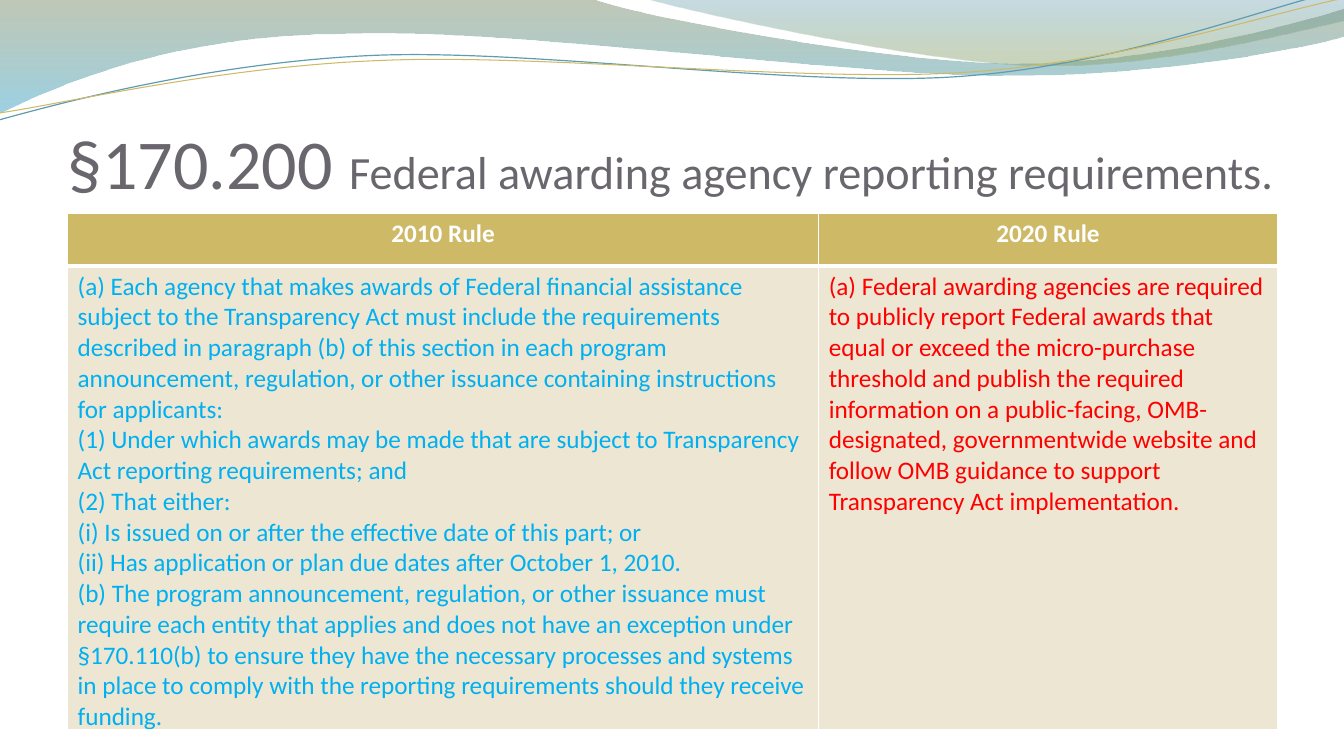
from dataclasses import dataclass

from pptx import Presentation
from pptx import util as u
from pptx.dml.color import RGBColor
from pptx.enum import text
from pptx.oxml import ns, xmlchemy

FONT = "Calibri"
WHITE = RGBColor(0xFF, 0xFF, 0xFF)
GOLD = RGBColor(0xCE, 0xB9, 0x66)
CREAM = RGBColor(0xED, 0xE6, 0xD3)
GREY = RGBColor(0x69, 0x67, 0x6D)
SKY = RGBColor(0x00, 0xB0, 0xF0)
RED = RGBColor(0xFF, 0x00, 0x00)
TEAL = RGBColor(0x5E, 0x9C, 0xB1)
OLIVE = RGBColor(0x74, 0x85, 0x5E)
BLUE = RGBColor(0x4A, 0xAC, 0xCE)
DEEP_TEAL = RGBColor(0x45, 0x88, 0x9F)
LEAF = RGBColor(0x8A, 0xA3, 0x6D)

Point = tuple[float, float]


@dataclass
class Stop:
    position: float
    color: RGBColor
    opacity: int


@dataclass
class Wave:
    start: Point
    segments: list[tuple[Point, ...]]
    stops: tuple[Stop, ...] = ()
    line: RGBColor | None = None
    width: float = 0


@dataclass
class Column:
    width: float
    heading: str
    color: RGBColor
    paragraphs: list[str]


WAVES = [
    Wave(
        (0, -0.01),
        [
            ((5.87, -0.01),),
            ((6.34, 0.17), (8.85, 0.63), (10.11, 0.63)),
            ((11.38, 0.63), (12.78, 0.26), (13.33, 0.09)),
            ((13.35, 0.36),),
            ((13.11, 0.44), (11.6, 0.76), (9.94, 0.75)),
            ((8.29, 0.75), (5.09, 0.28), (3.43, 0.34)),
            ((1.72, 0.35), (0.61, 0.83), (-0.01, 1.13)),
        ],
        stops=(Stop(0, OLIVE, 45), Stop(1, BLUE, 55)),
    ),
    Wave(
        (6.39, -0.01),
        [
            ((6.79, 0.11), (9.09, 0.62), (10.25, 0.65)),
            ((11.41, 0.69), (12.82, 0.32), (13.33, 0.21)),
            ((13.33, 0),),
        ],
        stops=(Stop(0, DEEP_TEAL, 30), Stop(0.8, LEAF, 45)),
    ),
    Wave(
        (-0.01, 1.19),
        [
            ((0.64, 1.01), (2.11, 0.62), (3.69, 0.55)),
            ((5.27, 0.48), (7.9, 0.87), (9.5, 0.76)),
            ((11.1, 0.65), (12.52, 0.08), (13.31, -0.1)),
        ],
        line=TEAL,
        width=0.85,
    ),
    Wave(
        (0, 1.12),
        [
            ((0.63, 1.03), (2.18, 0.66), (3.78, 0.6)),
            ((5.37, 0.53), (7.96, 0.82), (9.55, 0.72)),
            ((11.15, 0.62), (12.55, 0.14), (13.34, -0.02)),
        ],
        line=GOLD,
        width=0.75,
    ),
]

TITLE = [("§170.200 ", 50), ("Federal awarding agency reporting requirements.", 33)]

COLUMNS = [
    Column(7.45, "2010 Rule", SKY, [
        "(a) Each agency that makes awards of Federal financial assistance subject to the "
        "Transparency Act must include the requirements described in paragraph (b) of this "
        "section in each program announcement, regulation, or other issuance containing "
        "instructions for applicants:",
        "(1) Under which awards may be made that are subject to Transparency Act reporting "
        "requirements; and",
        "(2) That either:",
        "(i) Is issued on or after the effective date of this part; or",
        "(ii) Has application or plan due dates after October 1, 2010.",
        "(b) The program announcement, regulation, or other issuance must require each entity "
        "that applies and does not have an exception under §170.110(b) to ensure they have the "
        "necessary processes and systems in place to comply with the reporting requirements "
        "should they receive funding.",
    ]),
    Column(4.55, "2020 Rule", RED, [
        "(a) Federal awarding agencies are required to publicly report Federal awards that "
        "equal or exceed the micro-purchase threshold and publish the required information on "
        "a public-facing, OMB-designated, governmentwide website and follow OMB guidance to "
        "support Transparency Act implementation.",
    ]),
]
ROW_HEIGHTS = [0.52, 2.86]
TABLE_HEIGHT = 5.12
HEADING_BORDERS = {"a:lnL": 1, "a:lnR": 1, "a:lnT": 1, "a:lnB": 3}
BODY_BORDERS = {"a:lnL": 1, "a:lnR": 1, "a:lnT": 3, "a:lnB": 1}


def bend(s, wave: Wave) -> None:
    lines = iter(list(s.element.iter(ns.qn("a:lnTo"))))
    for segment in wave.segments:
        steps = [next(lines) for _ in segment]
        if len(steps) == 3:
            curve = xmlchemy.OxmlElement("a:cubicBezTo")
            steps[0].addprevious(curve)
            for step in steps:
                curve.append(step[0])
                step.getparent().remove(step)


def draw_wave(shapes, wave: Wave) -> None:
    points = [wave.start, *(point for segment in wave.segments for point in segment)]
    start, *rest = [(u.Inches(x), u.Inches(y)) for x, y in points]
    builder = shapes.build_freeform(*start)
    builder.add_line_segments(rest, close=bool(wave.stops))
    s = builder.convert_to_shape()
    bend(s, wave)
    s.shadow.inherit = False
    if wave.stops:
        s.fill.gradient()
        s.fill.gradient_angle = 270
        for stop, target in zip(wave.stops, s.fill.gradient_stops):
            target.position = stop.position
            target.color.rgb = stop.color
        for stop, color in zip(wave.stops, s.element.iter(ns.qn("a:srgbClr"))):
            alpha = xmlchemy.OxmlElement("a:alpha")
            alpha.set("val", str(stop.opacity * 1000))
            color.append(alpha)
        s.line.fill.background()
    else:
        s.fill.background()
        s.line.color.rgb = wave.line
        s.line.width = u.Pt(wave.width)


def draw_title(shapes) -> None:
    s = shapes.add_textbox(u.Inches(0.67), u.Inches(0.77), u.Inches(12), u.Inches(1.25))
    tf = s.text_frame
    tf.word_wrap = True
    tf.vertical_anchor = text.MSO_ANCHOR.BOTTOM
    tf.margin_left = tf.margin_right = tf.margin_bottom = 0
    p = tf.paragraphs[0]
    p.font.name = FONT
    p.font.color.rgb = GREY
    for words, size in TITLE:
        r = p.add_run()
        r.text = words
        r.font.size = u.Pt(size)


def set_borders(cell, borders: dict[str, float]) -> None:
    properties = cell.fill._xPr
    for i, (tag, width) in enumerate(borders.items()):
        line = xmlchemy.OxmlElement(tag)
        line.set("w", str(u.Pt(width)))
        fill = xmlchemy.OxmlElement("a:solidFill")
        color = xmlchemy.OxmlElement("a:srgbClr")
        color.set("val", str(WHITE))
        fill.append(color)
        line.append(fill)
        properties.insert(i, line)


def fill_cell(cell, paragraphs: list[str], fill: RGBColor, color: RGBColor, heading: bool) -> None:
    cell.fill.solid()
    cell.fill.fore_color.rgb = fill
    set_borders(cell, HEADING_BORDERS if heading else BODY_BORDERS)
    cell.text_frame.text = "\n".join(paragraphs)
    for p in cell.text_frame.paragraphs:
        p.alignment = text.PP_ALIGN.CENTER if heading else text.PP_ALIGN.LEFT
        p.font.name = FONT
        p.font.size = u.Pt(18)
        p.font.bold = heading
        p.font.color.rgb = color


def draw_table(shapes) -> None:
    frame = shapes.add_table(
        len(ROW_HEIGHTS), len(COLUMNS),
        u.Inches(0.67), u.Inches(2.12), u.Inches(12), u.Inches(TABLE_HEIGHT),
    )
    table = frame.table
    for row, height in zip(table.rows, ROW_HEIGHTS):
        row.height = u.Inches(height)
    for i, column in enumerate(COLUMNS):
        table.columns[i].width = u.Inches(column.width)
        fill_cell(table.cell(0, i), [column.heading], GOLD, WHITE, True)
        fill_cell(table.cell(1, i), column.paragraphs, CREAM, column.color, False)
    frame.height = u.Inches(TABLE_HEIGHT)


def main() -> None:
    prs = Presentation()
    prs.slide_width, prs.slide_height = u.Inches(13.33), u.Inches(7.5)
    shapes = prs.slides.add_slide(prs.slide_layouts[6]).shapes
    for wave in WAVES:
        draw_wave(shapes, wave)
    draw_title(shapes)
    draw_table(shapes)
    prs.save("out.pptx")


if __name__ == "__main__":
    main()
